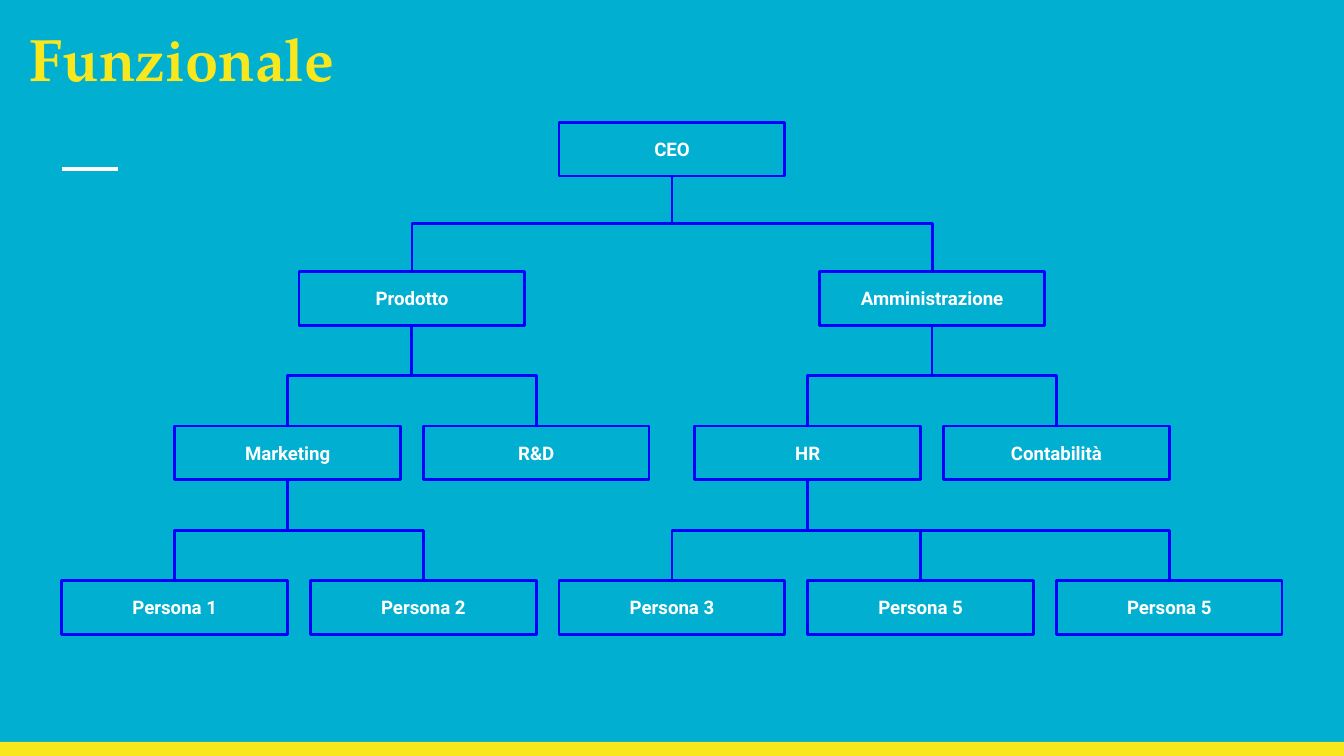
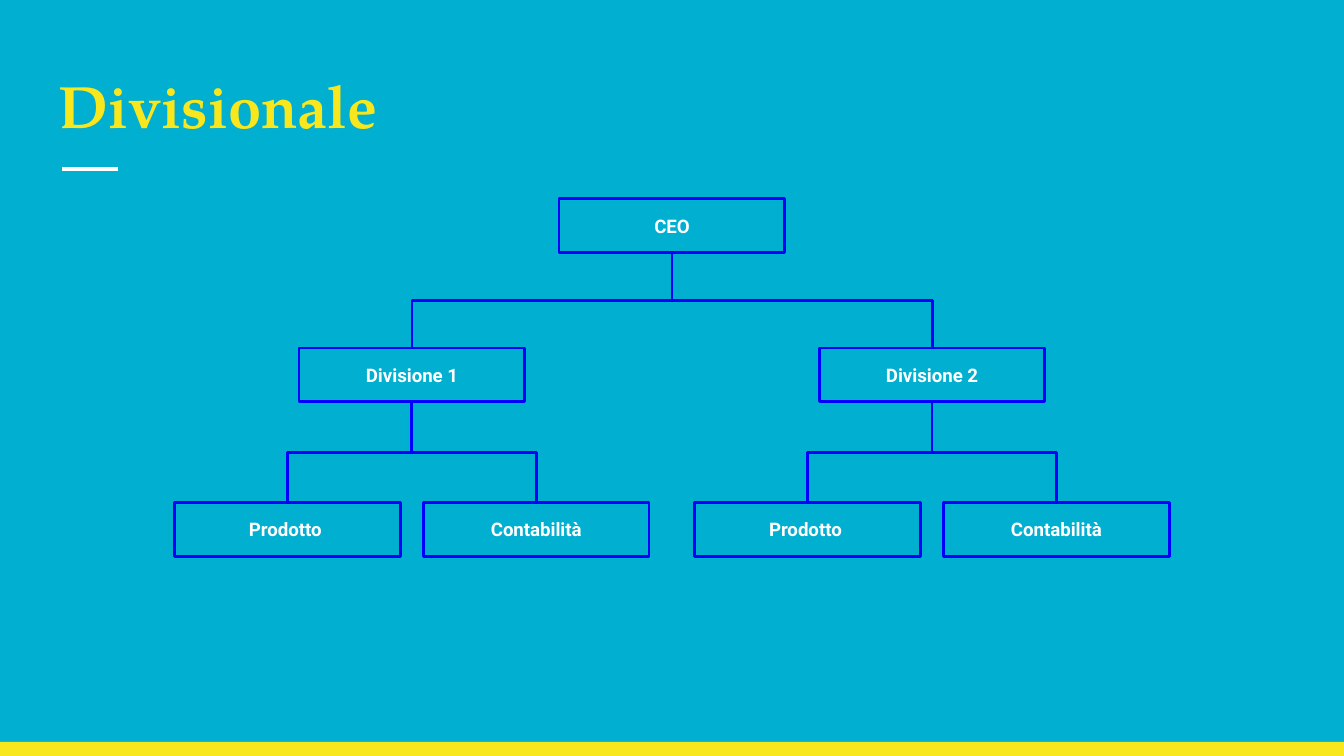
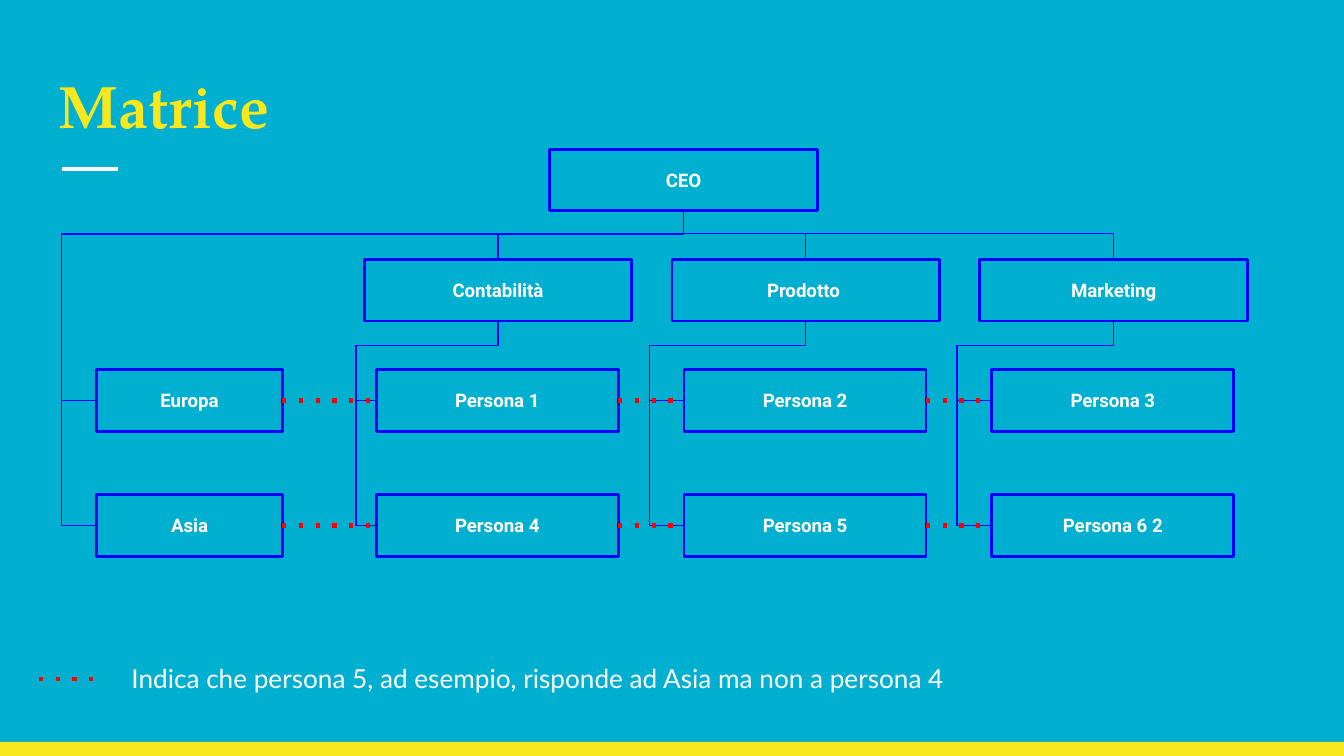
from dataclasses import dataclass

from lxml import etree
from pptx import Presentation
from pptx.dml.color import RGBColor
from pptx.enum.shapes import MSO_CONNECTOR, MSO_SHAPE
from pptx.enum.text import MSO_ANCHOR, PP_ALIGN
from pptx.oxml.ns import qn
from pptx.util import Inches, Pt

RECT = MSO_SHAPE.RECTANGLE
STRAIGHT, ELBOW = MSO_CONNECTOR.STRAIGHT, MSO_CONNECTOR.ELBOW
TOP, MIDDLE = MSO_ANCHOR.TOP, MSO_ANCHOR.MIDDLE
LEFT, CENTER = PP_ALIGN.LEFT, PP_ALIGN.CENTER
AT_TOP, AT_LEFT, AT_BASE, AT_RIGHT = range(4)


@dataclass(frozen=True)
class Theme:
    """Colours, fonts, type sizes and line widths."""
    back: str = "01AFD1"
    accent: str = "F8E71C"
    edge: str = "0000FF"
    dots: str = "FF0000"
    light: str = "FFFFFF"
    head_font: str = "TeX Gyre Pagella"
    box_font: str = "Roboto"
    note_font: str = "Lato"
    head_size: float = 32
    box_size: float = 10
    note_size: float = 14
    thin: float = 0.75
    mid: float = 1.5
    thick: float = 2.25


@dataclass(frozen=True)
class Node:
    """A box of a chart; without x it is centred over its kids."""
    label: str
    kids: tuple = ()
    x: float = None

    def place(self):
        """Return the left edge in inches."""
        if self.x is not None:
            return self.x
        return sum(kid.place() for kid in self.kids) / len(self.kids)


THEME = Theme()
NODE_W, NODE_H = 1.68, 0.4
TEAM_X = (1.3, 3.15, 5.17, 7.02)
STAFF_X = [0.46 + 1.85 * i for i in range(5)]
CELL_H = 0.46
UNITS = ("Contabilità", "Prodotto ", "Marketing")
AREAS = (
    ("Europa", 2.75, ("Persona 1", "Persona 2", "Persona 3")),
    ("Asia", 3.68, ("Persona 4", "Persona 5", "Persona 6 2")),
)
LANES = (2.65, 4.83, 7.12)


def color(code):
    """Turn a hex code into a colour."""
    return RGBColor.from_string(code)


def write(shape, text, font, size, tint, bold=False, align=LEFT, anchor=TOP):
    """Put one styled run into a shape."""
    frame = shape.text_frame
    frame.word_wrap = True
    frame.vertical_anchor = anchor
    frame.margin_left = frame.margin_right = Inches(0.1)
    frame.margin_top = frame.margin_bottom = Inches(0.1)
    para = frame.paragraphs[0]
    para.alignment = align
    run = para.add_run()
    run.text = text
    run.font.name = font
    run.font.size = Pt(size)
    run.font.bold = bold
    run.font.color.rgb = color(tint)


def add_text(slide, area, *style, **more):
    """Add a text box."""
    write(slide.shapes.add_textbox(*map(Inches, area)), *style, **more)


def add_box(slide, label, x, y, w, h):
    """Add an outlined box with a centred label."""
    box = slide.shapes.add_shape(RECT, *map(Inches, (x, y, w, h)))
    box.shadow.inherit = False
    box.fill.background()
    box.line.color.rgb = color(THEME.edge)
    box.line.width = Pt(THEME.mid)
    write(box, label, THEME.box_font, THEME.box_size, THEME.light,
          bold=True, align=CENTER, anchor=MIDDLE)
    return box


def add_line(slide, kind, ends, tint, width):
    """Add a plain connector without a shadow."""
    line = slide.shapes.add_connector(kind, *map(Inches, ends))
    line.line.color.rgb = color(tint)
    line.line.width = Pt(width)
    etree.SubElement(line.element.spPr, qn("a:effectLst"))
    return line


def add_dots(slide, ends=(0, 0, 0, 0), pair=None):
    """Add a dotted line, joined to a pair of boxes if given."""
    line = add_line(slide, STRAIGHT, ends, THEME.dots, THEME.thick)
    stroke = line.element.spPr.find(qn("a:ln"))
    etree.SubElement(stroke, qn("a:prstDash"), val="dot")
    if pair:
        line.begin_connect(pair[0], AT_RIGHT)
        line.end_connect(pair[1], AT_LEFT)


def add_elbow(slide, boss, kid, width, bus=None, lane=None):
    """Link a boss's base to a kid's top, or to its left side by a lane."""
    line = add_line(slide, ELBOW, (0, 0, 0, 0), THEME.edge, width)
    line.begin_connect(boss, AT_BASE)
    line.end_connect(kid, AT_TOP if lane is None else AT_LEFT)
    x, y = line.begin_x, line.begin_y
    run, drop = line.end_x - x, line.end_y - y
    line.left = int(x + (run - drop) / 2)
    line.top = int(y + (drop - abs(run)) / 2)
    line.width, line.height = drop, abs(run)
    form = line.element.spPr.find(qn("a:xfrm"))
    form.set("rot", str((270 if run > 0 else 90) * 60000))
    form.set("flipH", "1" if run > 0 else "0")
    form.set("flipV", "0")
    bends = [0.5 if bus is None else (Inches(bus) - y) / drop]
    geom = line.element.spPr.find(qn("a:prstGeom"))
    if lane is not None:
        bends.append((Inches(lane) - x) / run)
        geom.set("prst", "bentConnector4")
    guides = geom.find(qn("a:avLst"))
    for i, bend in enumerate(bends, 1):
        etree.SubElement(guides, qn("a:gd"), name=f"adj{i}",
                         fmla=f"val {round(bend * 100000)}")


def add_tree(slide, node, tops):
    """Draw a node and all below it, one top per level."""
    box = add_box(slide, node.label, node.place(), tops[0], NODE_W, NODE_H)
    for kid in node.kids:
        add_elbow(slide, box, add_tree(slide, kid, tops[1:]), THEME.mid)
    return box


def add_slide(deck, title, area=(0.34, 0.41, 9.32, 0.71)):
    """Add a slide with backdrop, bottom band, dash and title."""
    slide = deck.slides.add_slide(deck.slide_layouts[6])
    fill = slide.background.fill
    fill.solid()
    fill.fore_color.rgb = color(THEME.back)
    band = slide.shapes.add_shape(RECT, *map(Inches, (0, 5.52, 10, 0.11)))
    band.shadow.inherit = False
    band.fill.solid()
    band.fill.fore_color.rgb = color(THEME.accent)
    band.line.fill.background()
    add_line(slide, STRAIGHT, (0.46, 1.26, 0.88, 1.26), THEME.light, THEME.thick)
    add_text(slide, area, title, THEME.head_font, THEME.head_size,
             THEME.accent, bold=True)
    return slide


def add_functions(deck):
    """Build the chart by function."""
    slide = add_slide(deck, "Funzionale", (0.12, 0.06, 9.32, 0.63))
    names = ("Persona 1", "Persona 2", "Persona 3", "Persona 5", "Persona 5")
    staff = tuple(Node(name, x=x) for name, x in zip(names, STAFF_X))
    teams = (("Marketing", staff[:2]), ("R&D", ()),
             ("HR", staff[2:]), ("Contabilità", ()))
    teams = tuple(Node(*team, x) for team, x in zip(teams, TEAM_X))
    heads = (Node("Prodotto", teams[:2]), Node("Amministrazione", teams[2:]))
    add_tree(slide, Node("CEO", heads), (0.91, 2.02, 3.17, 4.32))


def add_divisions(deck):
    """Build the chart by division."""
    slide = add_slide(deck, "Divisionale")
    names = ("Prodotto ", "Contabilità") * 2
    teams = tuple(Node(name, x=x) for name, x in zip(names, TEAM_X))
    heads = (Node("Divisione 1", teams[:2]), Node("Divisione 2", teams[2:]))
    add_tree(slide, Node("CEO", heads), (1.48, 2.59, 3.74))


def add_matrix(deck):
    """Build the matrix of units and areas with its key."""
    slide = add_slide(deck, "Matrice")
    chief = add_box(slide, "CEO", 4.09, 1.11, 1.99, CELL_H)
    units = [add_box(slide, name, 2.71 + 2.29 * i, 1.93, 1.99, CELL_H)
             for i, name in enumerate(UNITS)]
    for unit in units:
        add_elbow(slide, chief, unit, THEME.thin, bus=1.74)
    for area, y, names in AREAS:
        last = add_box(slide, area, 0.72, y, 1.38, CELL_H)
        add_elbow(slide, chief, last, THEME.thin, bus=1.74, lane=0.46)
        for i, name in enumerate(names):
            cell = add_box(slide, name, 2.8 + 2.29 * i, y, 1.8, CELL_H)
            add_elbow(slide, units[i], cell, THEME.thin, bus=2.57, lane=LANES[i])
            add_dots(slide, pair=(last, cell))
            last = cell
    add_dots(slide, (0.29, 5.05, 0.77, 5.05))
    add_text(slide, (0.88, 4.83, 6.94, 0.46),
             "Indica che persona 5, ad esempio, risponde ad Asia ma non a persona 4",
             THEME.note_font, THEME.note_size, THEME.light)


def main():
    """Build and save the deck."""
    deck = Presentation()
    deck.slide_width = Inches(10)
    deck.slide_height = deck.slide_width * 9 // 16
    add_functions(deck)
    add_divisions(deck)
    add_matrix(deck)
    deck.save("out.pptx")


if __name__ == "__main__":
    main()
